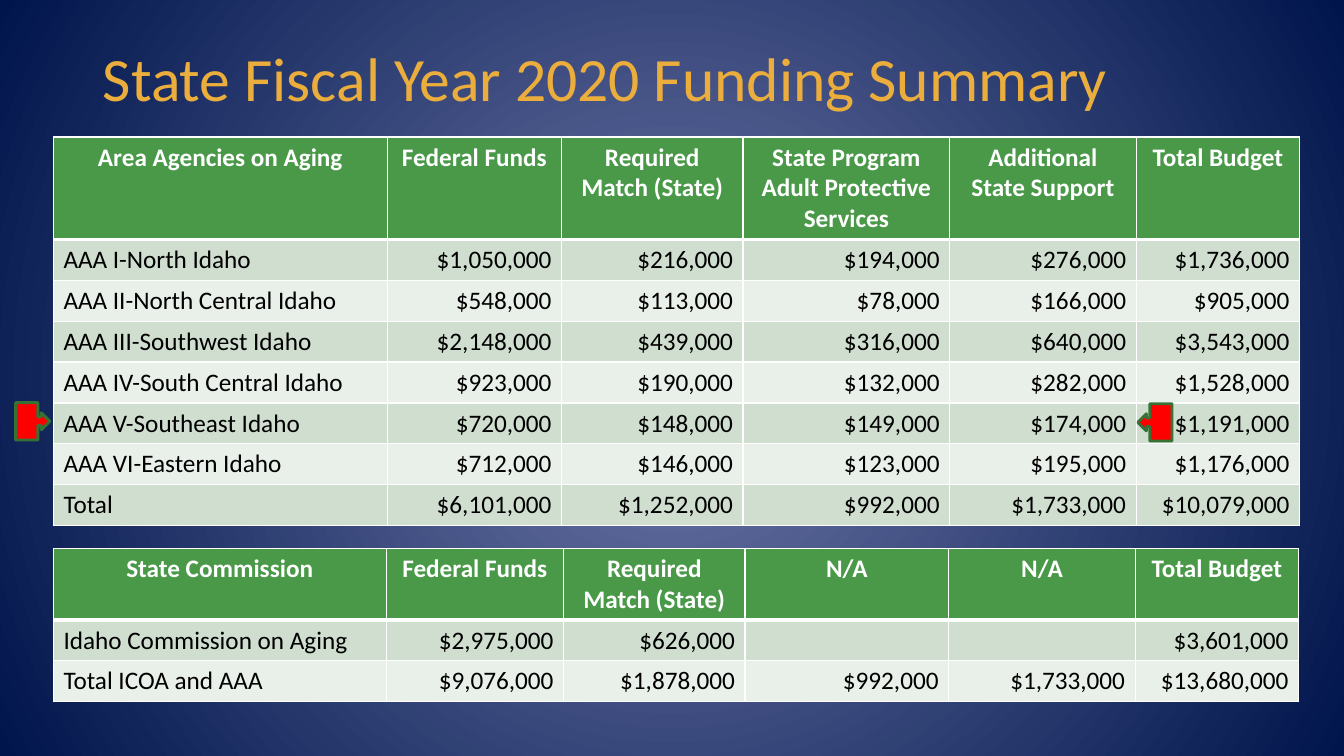
import pptx
import pptx.util
import pptx.dml.color
import pptx.enum.shapes
import pptx.enum.text
import pptx.oxml.ns
import lxml.etree

Inches = pptx.util.Inches
Pt = pptx.util.Pt
RGBColor = pptx.dml.color.RGBColor
ALIGN = pptx.enum.text.PP_ALIGN
qn = pptx.oxml.ns.qn

GLOW = RGBColor(0x6D, 0x77, 0xA7)
NAVY = RGBColor(0x00, 0x15, 0x4C)
GOLD = RGBColor(0xEB, 0xAD, 0x3B)
GREEN = RGBColor(0x49, 0x99, 0x49)
DARK_GREEN = RGBColor(0x36, 0x71, 0x36)
BANDS = [RGBColor(0xD0, 0xDE, 0xD0), RGBColor(0xE9, 0xEF, 0xE9)]
WHITE = RGBColor(0xFF, 0xFF, 0xFF)
BLACK = RGBColor(0x00, 0x00, 0x00)
RED = RGBColor(0xFF, 0x00, 0x00)

TITLE_FONT = {"name": "Calibri", "size": Pt(44), "bold": False}
HEADER_FONT = {"name": "Calibri", "size": Pt(18), "bold": True}
BODY_FONT = {"name": "Calibri", "size": Pt(18), "bold": False}

AGENCIES = [
    ["Area Agencies on Aging", "Federal Funds", "Required Match (State)",
     "State Program Adult Protective Services", "Additional State Support", "Total Budget"],
    ["AAA I-North Idaho", "$1,050,000", "$216,000", "$194,000", "$276,000", "$1,736,000"],
    ["AAA II-North Central Idaho", "$548,000", "$113,000", "$78,000", "$166,000", "$905,000"],
    ["AAA III-Southwest Idaho", "$2,148,000", "$439,000", "$316,000", "$640,000", "$3,543,000"],
    ["AAA IV-South Central Idaho", "$923,000", "$190,000", "$132,000", "$282,000", "$1,528,000"],
    ["AAA V-Southeast Idaho", "$720,000", "$148,000", "$149,000", "$174,000", "$1,191,000"],
    ["AAA VI-Eastern Idaho", "$712,000", "$146,000", "$123,000", "$195,000", "$1,176,000"],
    ["Total", "$6,101,000", "$1,252,000", "$992,000", "$1,733,000", "$10,079,000"],
]
COMMISSION = [
    ["State Commission", "Federal Funds", "Required Match (State)", "N/A", "N/A", "Total Budget"],
    ["Idaho Commission on Aging", "$2,975,000", "$626,000", "", "", "$3,601,000"],
    ["Total ICOA and AAA", "$9,076,000", "$1,878,000", "$992,000", "$1,733,000", "$13,680,000"],
]
AGENCY_COLUMNS = [3.31, 1.73, 1.8, 2.05, 1.85, 1.62]
COMMISSION_COLUMNS = [3.3, 1.76, 1.8, 2.02, 1.85, 1.62]


def format_font(font, formats, color):
    for attribute, value in formats.items():
        setattr(font, attribute, value)
    font.color.rgb = color


def paint_background(slide):
    fill = slide.background.fill
    fill.gradient()
    for stop, color, position in zip(fill.gradient_stops, [GLOW, NAVY], [0, 1]):
        stop.color.rgb = color
        stop.position = position
    gradient = slide.element.find(".//" + qn("a:gradFill"))
    linear = gradient.find(qn("a:lin"))
    radial = lxml.etree.Element(qn("a:path"), {"path": "circle"})
    lxml.etree.SubElement(radial, qn("a:fillToRect"), dict.fromkeys("ltrb", "50000"))
    gradient.replace(linear, radial)


def add_title(slide, left, top, width, height):
    title = slide.shapes.title
    box = {"left": left, "top": top, "width": width, "height": height}
    for side, length in box.items():
        setattr(title, side, Inches(length))
    title.text_frame.text = "State Fiscal Year 2020 Funding Summary"
    title.text_frame.vertical_anchor = pptx.enum.text.MSO_ANCHOR.MIDDLE
    heading = title.text_frame.paragraphs[0]
    heading.alignment = ALIGN.LEFT
    heading.line_spacing = 0.9
    format_font(heading.runs[0].font, TITLE_FONT, GOLD)


def add_borders(cell, top_width, bottom_width):
    properties = cell._tc.get_or_add_tcPr()
    widths = {"lnL": 1, "lnR": 1, "lnT": top_width, "lnB": bottom_width}
    for side, width in widths.items():
        border = lxml.etree.SubElement(properties, qn("a:" + side), {"w": str(Pt(width))})
        paint = lxml.etree.SubElement(border, qn("a:solidFill"))
        lxml.etree.SubElement(paint, qn("a:srgbClr"), {"val": str(WHITE)})


def add_funding_table(slide, left, top, width, height, rows, columns, header_height):
    frame = slide.shapes.add_table(
        len(rows), len(columns), Inches(left), Inches(top), Inches(width), Inches(height))
    funding = frame.table
    for column, column_width in zip(funding.columns, columns):
        column.width = Inches(column_width)
    body_height = (height - header_height) / (len(rows) - 1)
    for r, entries in enumerate(rows):
        is_header = r == 0
        funding.rows[r].height = Inches(header_height if is_header else body_height)
        for c, entry in enumerate(entries):
            cell = funding.cell(r, c)
            add_borders(cell, 3 if r == 1 else 1, 3 if is_header else 1)
            cell.fill.solid()
            cell.fill.fore_color.rgb = GREEN if is_header else BANDS[(r - 1) % 2]
            paragraph = cell.text_frame.paragraphs[0]
            paragraph.alignment = ALIGN.CENTER if is_header else ALIGN.RIGHT if c else ALIGN.LEFT
            if entry:
                run = paragraph.add_run()
                run.text = entry
                format_font(run.font, HEADER_FONT if is_header else BODY_FONT,
                            WHITE if is_header else BLACK)


def add_row_marker(slide, left, top, width, height, rotation):
    marker = slide.shapes.add_shape(
        pptx.enum.shapes.MSO_SHAPE.UP_ARROW_CALLOUT,
        Inches(left), Inches(top), Inches(width), Inches(height))
    marker.rotation = rotation
    marker.shadow.inherit = False
    marker.fill.solid()
    marker.fill.fore_color.rgb = RED
    marker.line.color.rgb = DARK_GREEN
    marker.line.width = Pt(2)


def main():
    presentation = pptx.Presentation()
    presentation.slide_width = Inches(13.33)
    presentation.slide_height = Inches(7.5)
    slide = presentation.slides.add_slide(presentation.slide_layouts[5])
    paint_background(slide)
    add_title(slide, 0.92, 0.4, 11.5, 0.82)
    add_funding_table(slide, 0.53, 1.36, 12.35, 3.84, AGENCIES, AGENCY_COLUMNS, 1.01)
    add_funding_table(slide, 0.53, 5.44, 12.35, 1.51, COMMISSION, COMMISSION_COLUMNS, 0.7)
    add_row_marker(slide, 11.27, 4.02, 0.37, 0.34, 270)
    add_row_marker(slide, 0.14, 4.01, 0.37, 0.34, 90)
    presentation.save("out.pptx")


if __name__ == "__main__":
    main()
